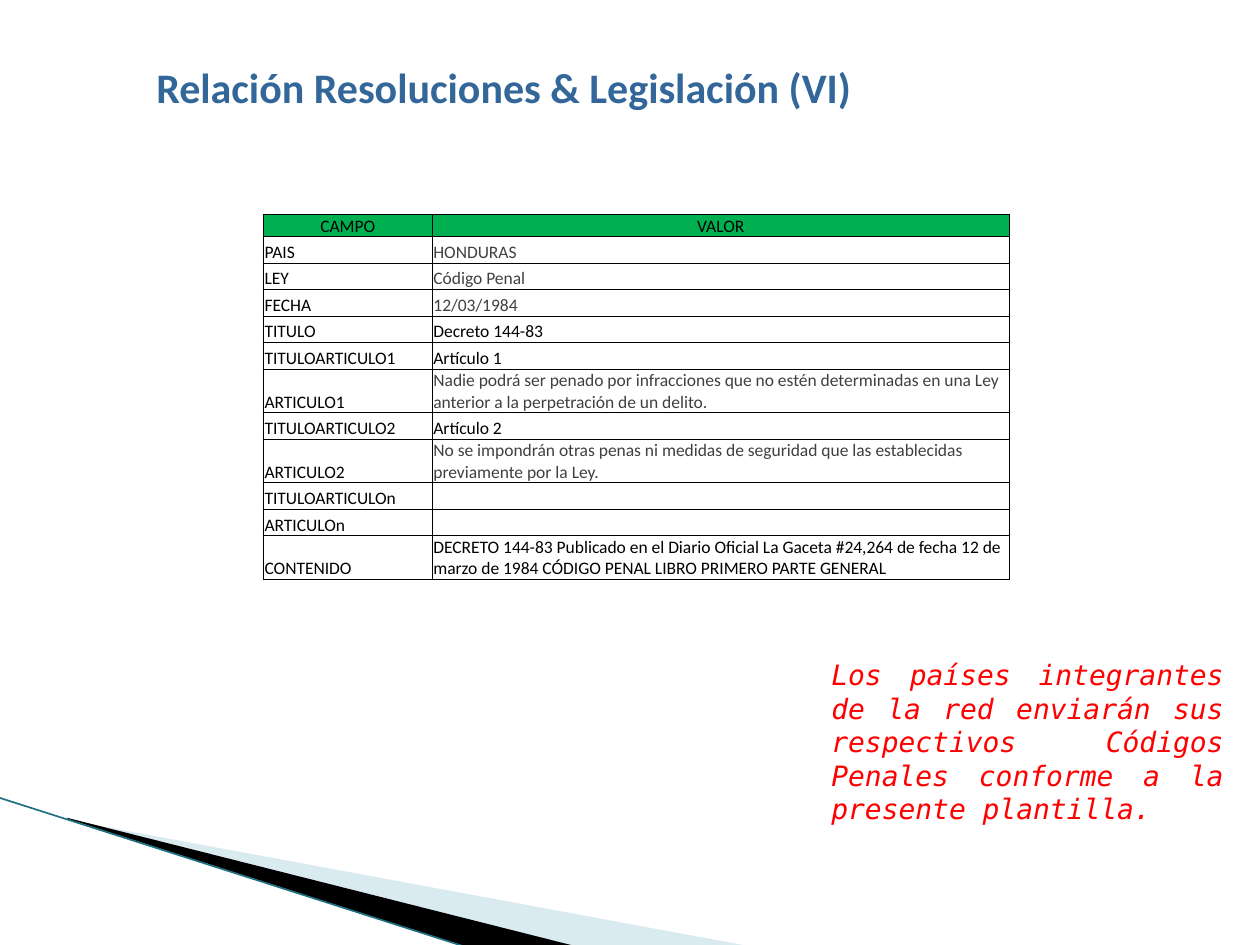
from lxml.etree import SubElement
from pptx import Presentation
from pptx.dml.color import RGBColor
from pptx.enum.shapes import MSO_CONNECTOR
from pptx.enum.text import MSO_ANCHOR, PP_ALIGN
from pptx.oxml.ns import qn
from pptx.util import Inches, Pt

TITLE = "Relación Resoluciones & Legislación (VI)"
NOTE = ("Los países integrantes de la red enviarán sus respectivos Códigos "
        "Penales conforme a la presente plantilla.")
ROWS = [
    ("CAMPO", "VALOR", "head"),
    ("PAIS", "HONDURAS", "soft"),
    ("LEY", "Código Penal", "soft"),
    ("FECHA", "12/03/1984", "soft"),
    ("TITULO", "Decreto 144-83", "cell"),
    ("TITULOARTICULO1", "Artículo 1", "cell"),
    ("ARTICULO1", "Nadie podrá ser penado por infracciones que no estén "
     "determinadas en una Ley anterior a la perpetración de un delito.", "soft"),
    ("TITULOARTICULO2", "Artículo 2", "cell"),
    ("ARTICULO2", "No se impondrán otras penas ni medidas de seguridad que las "
     "establecidas previamente por la Ley.", "soft"),
    ("TITULOARTICULOn", "", "cell"),
    ("ARTICULOn", "", "cell"),
    ("CONTENIDO", "DECRETO 144-83 Publicado en el Diario Oficial La Gaceta "
     "#24,264 de fecha 12 de marzo de 1984 CÓDIGO PENAL LIBRO PRIMERO PARTE "
     "GENERAL", "cell"),
]
WIDTHS = (1.34, 4.58)
HEAD, ROW = 0.05, 0.21
WEDGES = [
    ("pale", 40, [(0.55, 6.51), (5.95, 7.51), (4.56, 7.51), (0.55, 6.5)]),
    ("ink", 100, [(0.53, 6.49), (4.57, 7.51), (3.72, 7.52), (0.54, 6.5)]),
]
EDGE = (-0.01, 6.33, 3.71, 7.52)

THEME = {
    "color": {"title": "336699", "head": "000000", "cell": "000000",
              "soft": "404040", "note": "FF0000", "green": "00B050",
              "pale": "A0CBDC", "ink": "000000", "edge": "1F7083"},
    "font": {
        "title": {"name": "Calibri", "size": Pt(24), "bold": True},
        "head": {"name": "Calibri", "size": Pt(10), "bold": False},
        "cell": {"name": "Calibri", "size": Pt(10), "bold": False},
        "soft": {"name": "Calibri", "size": Pt(10), "bold": False},
        "note": {"name": "DejaVu Sans Mono", "size": Pt(16), "italic": True},
    },
}


def rgb(key):
    return RGBColor.from_string(THEME["color"][key])


def write(frame, text, style, align):
    para = frame.paragraphs[0]
    para.alignment = align
    if not text:
        size = THEME["font"][style]["size"]
        SubElement(para._p, qn("a:endParaRPr"), sz=str(int(size.pt * 100)))
        return
    run = para.add_run()
    run.text = text
    for key, value in THEME["font"][style].items():
        setattr(run.font, key, value)
    run.font.color.rgb = rgb(style)


def wedge(slide, color, alpha, points):
    pen = slide.shapes.build_freeform(*map(Inches, points[0]), scale=1)
    pen.add_line_segments([tuple(map(Inches, spot)) for spot in points[1:]])
    shape = pen.convert_to_shape()
    shape.shadow.inherit = False
    shape.line.fill.background()
    shape.fill.solid()
    shape.fill.fore_color.rgb = rgb(color)
    if alpha < 100:
        tone = shape.fill._xPr.find(".//" + qn("a:srgbClr"))
        SubElement(tone, qn("a:alpha"), val=str(alpha * 1000))


def edge(slide):
    line = slide.shapes.add_connector(MSO_CONNECTOR.STRAIGHT, *map(Inches, EDGE))
    line.line.color.rgb = rgb("edge")
    line.line.width = Pt(0.95)
    SubElement(line._element.spPr, qn("a:effectLst"))


def border(cell):
    props = cell._tc.get_or_add_tcPr()
    for spot, side in enumerate(("lnL", "lnR", "lnT", "lnB")):
        line = props.makeelement(qn("a:" + side), {"w": str(Pt(0.5))})
        fill = SubElement(line, qn("a:solidFill"))
        SubElement(fill, qn("a:srgbClr"), val=THEME["color"]["ink"])
        props.insert(spot, line)


def fields(slide):
    high = HEAD + ROW * (len(ROWS) - 1)
    box = map(Inches, (2.09, 1.7, sum(WIDTHS), high))
    table = slide.shapes.add_table(len(ROWS), len(WIDTHS), *box).table
    table.first_row = table.horz_banding = False
    for col, width in zip(table.columns, WIDTHS):
        col.width = Inches(width)
    for top, (name, value, style) in enumerate(ROWS):
        head = style == "head"
        table.rows[top].height = Inches(HEAD if head else ROW)
        for left, text in enumerate((name, value)):
            cell = table.cell(top, left)
            look = {"margin_left": Inches(0.01), "margin_right": Inches(0.01),
                    "margin_top": Inches(0.01), "margin_bottom": 0,
                    "vertical_anchor": MSO_ANCHOR.MIDDLE if head else MSO_ANCHOR.BOTTOM}
            for key, item in look.items():
                setattr(cell, key, item)
            if head:
                cell.fill.solid()
                cell.fill.fore_color.rgb = rgb("green")
            else:
                cell.fill.background()
            border(cell)
            write(cell.text_frame, text, style if left or head else "cell",
                  PP_ALIGN.CENTER if head else PP_ALIGN.LEFT)


def main():
    deck = Presentation()
    deck.slide_width, deck.slide_height = Inches(10), Inches(7.5)
    slide = deck.slides.add_slide(deck.slide_layouts[5])

    for item in WEDGES:
        wedge(slide, *item)
    edge(slide)

    title = slide.shapes.title
    place = {"left": 1.14, "top": 0.44, "width": 5.77, "height": 0.5}
    for key, value in place.items():
        setattr(title, key, Inches(value))
    title.text_frame.word_wrap = False
    title.text_frame.vertical_anchor = MSO_ANCHOR.TOP
    write(title.text_frame, TITLE, "title", PP_ALIGN.LEFT)

    fields(slide)

    note = slide.shapes.add_textbox(*map(Inches, (6.5, 5.17, 3.31, 1.18)))
    note.text_frame.word_wrap = True
    write(note.text_frame, NOTE, "note", PP_ALIGN.JUSTIFY)
    deck.save("out.pptx")


if __name__ == "__main__":
    main()
